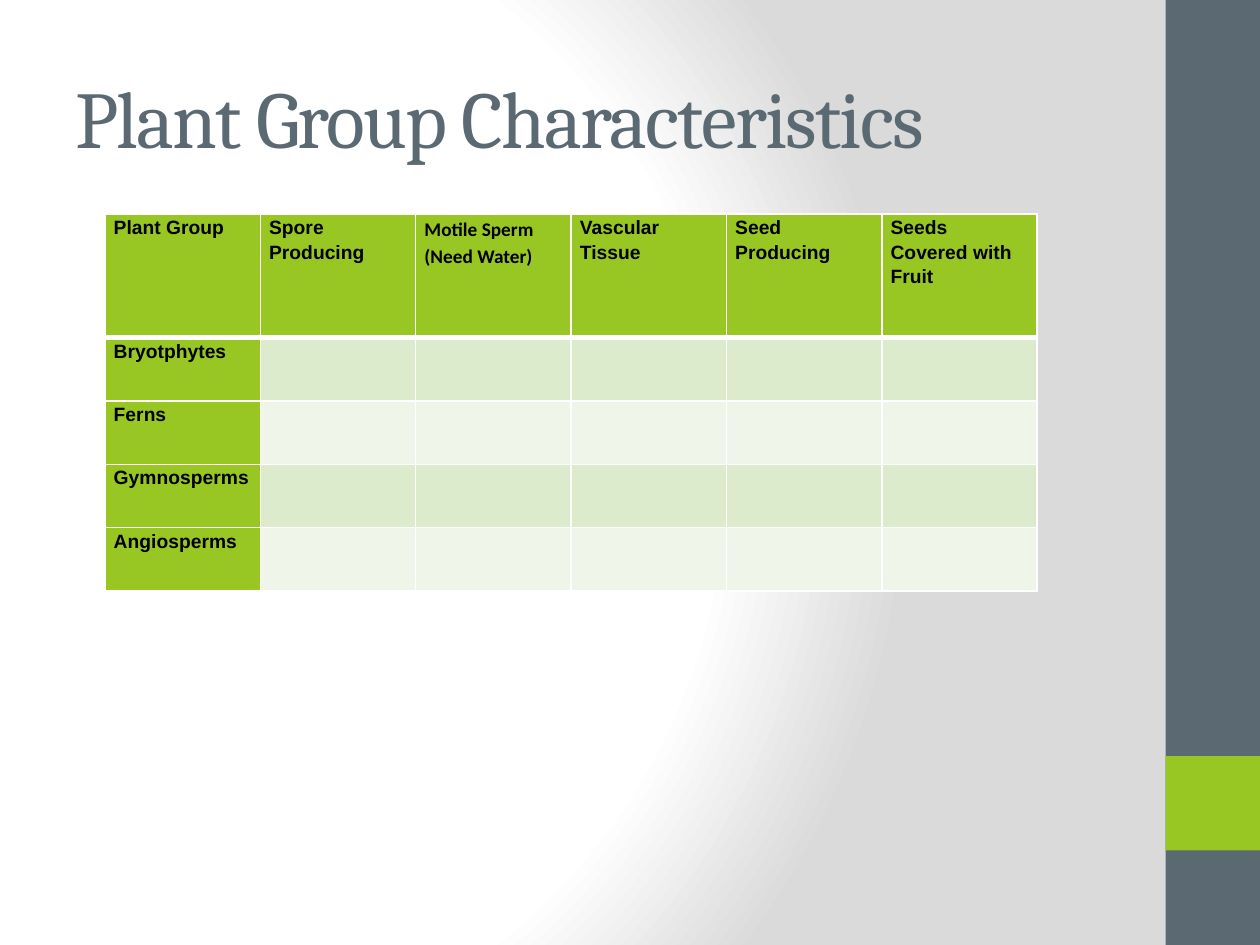
from lxml.etree import SubElement
from pptx import Presentation
from pptx.dml.color import RGBColor
from pptx.enum.shapes import MSO_SHAPE
from pptx.enum.text import MSO_ANCHOR
from pptx.oxml import parse_xml
from pptx.oxml.ns import nsdecls, qn
from pptx.util import Pt

TITLE = "Plant Group Characteristics"
HEADERS = ["Plant Group", "Spore Producing", "Motile Sperm\n(Need Water)",
           "Vascular Tissue", "Seed Producing", "Seeds Covered with Fruit"]
GROUPS = ["Bryotphytes", "Ferns", "Gymnosperms", "Angiosperms"]

SLATE = RGBColor(0x5B, 0x69, 0x73)
GREEN = RGBColor(0x98, 0xC7, 0x23)
BANDS = [RGBColor(0xDD, 0xEB, 0xCD), RGBColor(0xEF, 0xF5, 0xE8)]
BLACK = RGBColor(0, 0, 0)

WIDTH, HEIGHT = 720, 540
SIDEBAR = 54
COL_W, HEADER_H, ROW_H = 88.8, 70.5, 36.2

BACKGROUND = f"""<a:gradFill {nsdecls('a')} rotWithShape="1"><a:gsLst>
<a:gs pos="0"><a:srgbClr val="FFFFFF"/></a:gs>
<a:gs pos="75000"><a:srgbClr val="FFFFFF"/></a:gs>
<a:gs pos="100000"><a:srgbClr val="DADADA"/></a:gs></a:gsLst>
<a:path path="circle"><a:fillToRect l="20000" t="50000" r="100000" b="50000"/></a:path>
</a:gradFill>"""


def set_background(s):
    s.background.fill.gradient()
    old = s.element.find(".//" + qn("a:gradFill"))
    old.getparent().replace(old, parse_xml(BACKGROUND))


def add_block(s, x, y, w, h, color):
    sp = s.shapes.add_shape(MSO_SHAPE.RECTANGLE, Pt(x), Pt(y), Pt(w), Pt(h))
    sp.shadow.inherit = False
    sp.fill.solid()
    sp.fill.fore_color.rgb = color
    sp.line.fill.background()


def style_run(r, font, size, color, bold=False):
    r.font.name, r.font.size, r.font.bold = font, Pt(size), bold
    r.font.color.rgb = color


def add_title(s):
    box = s.shapes.add_textbox(Pt(36), Pt(21.6), Pt(600), Pt(90))
    tf = box.text_frame
    tf.word_wrap = True
    tf.vertical_anchor = MSO_ANCHOR.MIDDLE
    tf.text = TITLE
    r = tf.paragraphs[0].runs[0]
    style_run(r, "Cambria", 46, SLATE)
    r.font._element.set("spc", "-100")


def set_borders(cell, widths):
    """Draw white borders; widths maps L, R, T and B to points."""
    tc_pr = cell._tc.get_or_add_tcPr()
    for i, (side, width) in enumerate(widths.items()):
        ln = SubElement(tc_pr, qn(f"a:ln{side}"), w=str(Pt(width)))
        SubElement(SubElement(ln, qn("a:solidFill")), qn("a:srgbClr"), val="FFFFFF")
        tc_pr.insert(i, ln)


def fill_cell(cell, text, color, row):
    cell.fill.solid()
    cell.fill.fore_color.rgb = color
    top, bottom = (3 if row == 1 else 1), (3 if row == 0 else 1)
    set_borders(cell, {"L": 1, "R": 1, "T": top, "B": bottom})
    if not text:
        return
    cell.margin_left = cell.margin_right = Pt(5)
    cell.margin_top = cell.margin_bottom = 0
    cell.text_frame.text = text
    font = "Calibri" if "\n" in text else "Arial"
    for p in cell.text_frame.paragraphs:
        p.line_spacing = 1.15
        style_run(p.runs[0], font, 11, BLACK, bold=True)


def add_group_table(s):
    rows = [HEADERS] + [[g] + [""] * (len(HEADERS) - 1) for g in GROUPS]
    heights = [HEADER_H] + [ROW_H] * len(GROUPS)
    table = s.shapes.add_table(len(rows), len(HEADERS), Pt(60), Pt(122.4),
                               Pt(COL_W * len(HEADERS)), Pt(sum(heights))).table
    table.horz_banding = False
    for col in table.columns:
        col.width = Pt(COL_W)
    for i, row in enumerate(rows):
        table.rows[i].height = Pt(heights[i])
        for j, text in enumerate(row):
            color = GREEN if i == 0 or j == 0 else BANDS[(i - 1) % 2]
            fill_cell(table.cell(i, j), text, color, i)


def main():
    prs = Presentation()
    prs.slide_width, prs.slide_height = Pt(WIDTH), Pt(HEIGHT)
    s = prs.slides.add_slide(prs.slide_layouts[6])
    set_background(s)
    add_block(s, WIDTH - SIDEBAR, 0, SIDEBAR, HEIGHT, SLATE)
    add_block(s, WIDTH - SIDEBAR, HEIGHT - 2 * SIDEBAR, SIDEBAR, SIDEBAR, GREEN)
    add_title(s)
    add_group_table(s)
    prs.save("out.pptx")


if __name__ == "__main__":
    main()
